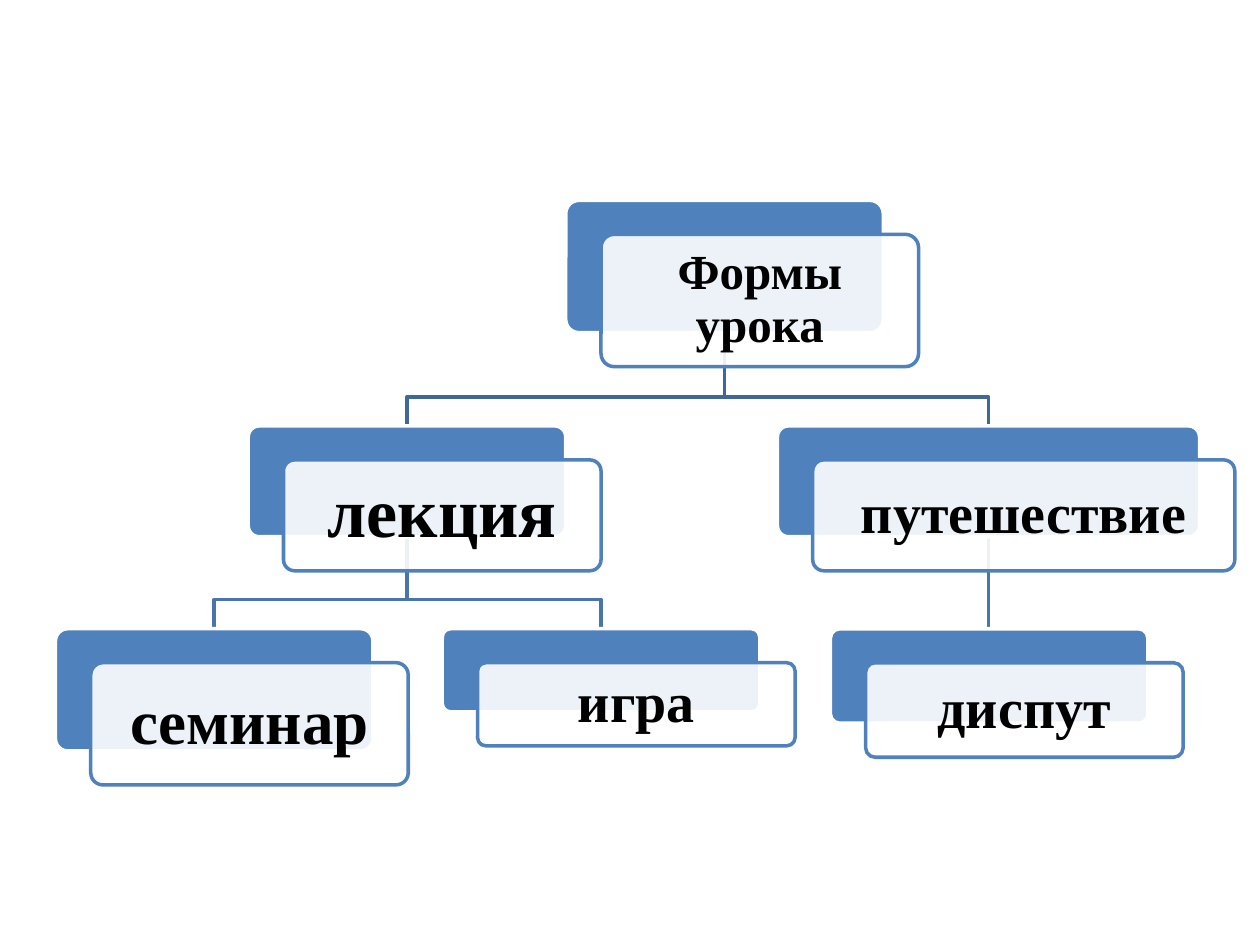
from lxml import etree
from pptx import Presentation
from pptx.dml.color import RGBColor
from pptx.enum.shapes import MSO_SHAPE
from pptx.enum.text import MSO_ANCHOR, PP_ALIGN
from pptx.oxml.ns import qn
from pptx.util import Inches, Pt

BLUE, WHITE = "4F81BD", "FFFFFF"
SHIFT = 0.28  # how far the front card sits right of and below the back card


def rgb(color):
    return RGBColor.from_string(color)


def add_card(x, y, w, h, fill, line, text="", size=28, inset=0.12, alpha=None):
    sp = s.shapes.add_shape(MSO_SHAPE.ROUNDED_RECTANGLE,
                            Inches(x), Inches(y), Inches(w), Inches(h))
    sp.shadow.inherit = False
    sp.adjustments[0] = 0.1
    sp.fill.solid()
    sp.fill.fore_color.rgb = rgb(fill)
    if alpha:
        clr = sp.fill._xPr.find(qn("a:solidFill")).find(qn("a:srgbClr"))
        etree.SubElement(clr, qn("a:alpha")).set("val", str(alpha * 1000))
    sp.line.color.rgb = rgb(line)
    sp.line.width = Pt(2)
    if text:
        tf = sp.text_frame
        tf.word_wrap = True
        tf.vertical_anchor = MSO_ANCHOR.MIDDLE
        tf.margin_left = tf.margin_right = Inches(inset)
        tf.margin_top = tf.margin_bottom = Inches(inset)
        p = tf.paragraphs[0]
        p.alignment = PP_ALIGN.CENTER
        p.line_spacing = 0.9
        r = p.add_run()
        r.text = text
        r.font.name = "Times New Roman"
        r.font.size = Pt(size)
        r.font.bold = True
        r.font.color.rgb = rgb("000000")


prs = Presentation()
prs.slide_width, prs.slide_height = Inches(10), Inches(7.5)
s = prs.slides.add_slide(prs.slide_layouts[6])

# text, parent, left, top, width, height, font size, inset
nodes = [
    ("Формы урока", None, 4.49, 1.59, 2.52, 1.05, 28, 0.12),
    ("лекция", "Формы урока", 1.97, 3.38, 2.52, 0.88, 40, 0.17),
    ("семинар", "лекция", 0.44, 4.99, 2.52, 0.97, 36, 0.15),
    ("игра", "лекция", 3.51, 4.99, 2.52, 0.66, 32, 0.13),
    ("путешествие", "Формы урока", 6.17, 3.38, 3.35, 0.88, 32, 0.13),
    ("диспут", "путешествие", 6.59, 4.99, 2.52, 0.75, 32, 0.13),
]
boxes = {text: (x, y, w, h) for text, parent, x, y, w, h, size, inset in nodes}

# Elbow lines from the bottom centre of a parent to the top centre of a child
for text, parent, x, y, w, h, size, inset in reversed(nodes):
    if parent is None:
        continue
    px, py, pw, ph = boxes[parent]
    start_x, start_y, end_x = px + pw / 2, py + ph, x + w / 2
    bend_y = y - 0.23
    points = [(start_x, bend_y), (end_x, bend_y), (end_x, y)]
    if abs(start_x - end_x) < 0.02:
        points = [(start_x, y)]
    fb = s.shapes.build_freeform(Inches(start_x), Inches(start_y))
    fb.add_line_segments([(Inches(a), Inches(b)) for a, b in points], close=False)
    sp = fb.convert_to_shape()
    sp.shadow.inherit = False
    sp.fill.background()
    sp.line.color.rgb = rgb("3F6797" if parent == nodes[0][0] else "4875AC")
    sp.line.width = Pt(2)

for text, parent, x, y, w, h, size, inset in nodes:
    add_card(x, y, w, h, BLUE, WHITE)
    add_card(x + SHIFT, y + SHIFT - 0.01, w, h, WHITE, BLUE,
             text=text, size=size, inset=inset, alpha=90)

prs.save("out.pptx")
